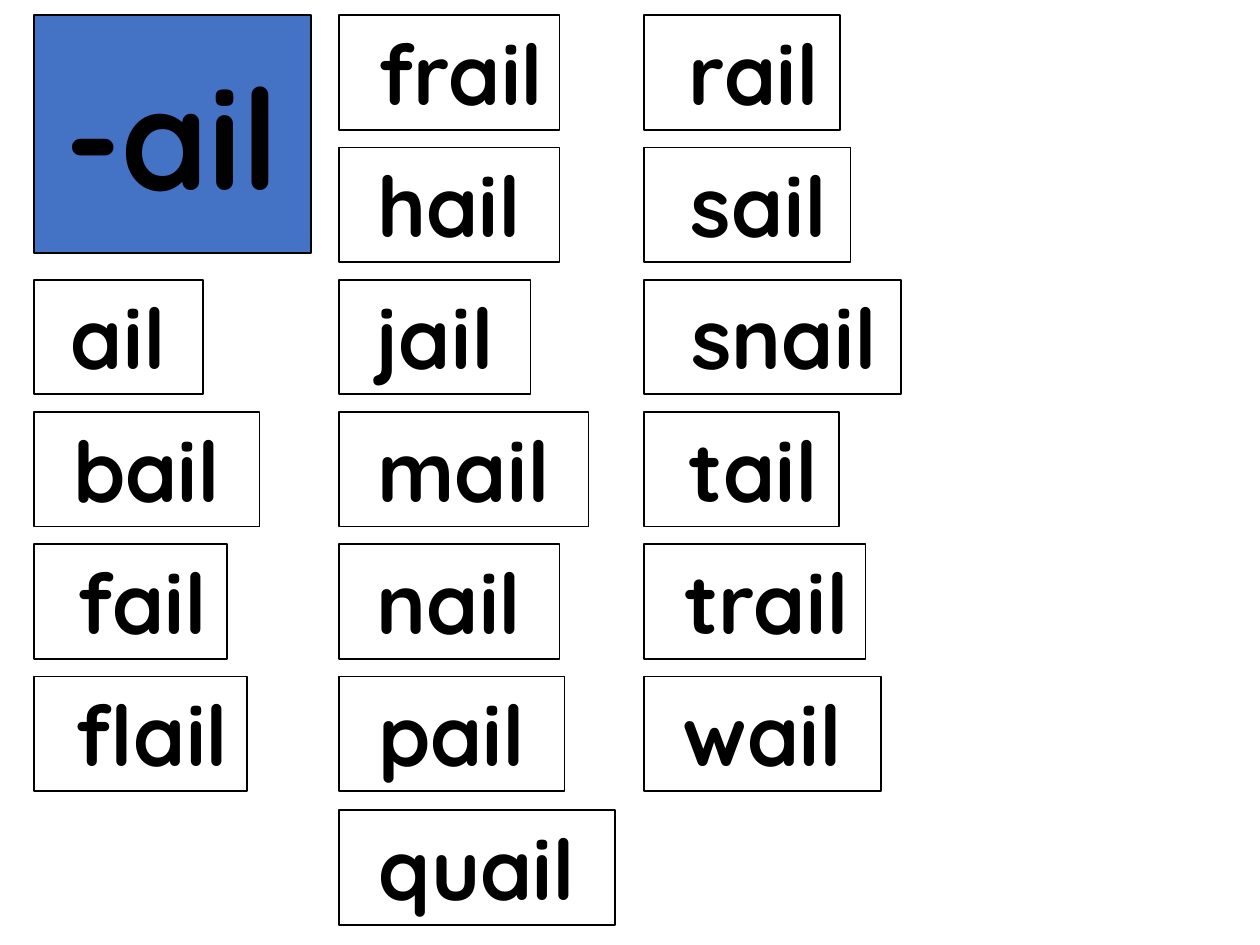
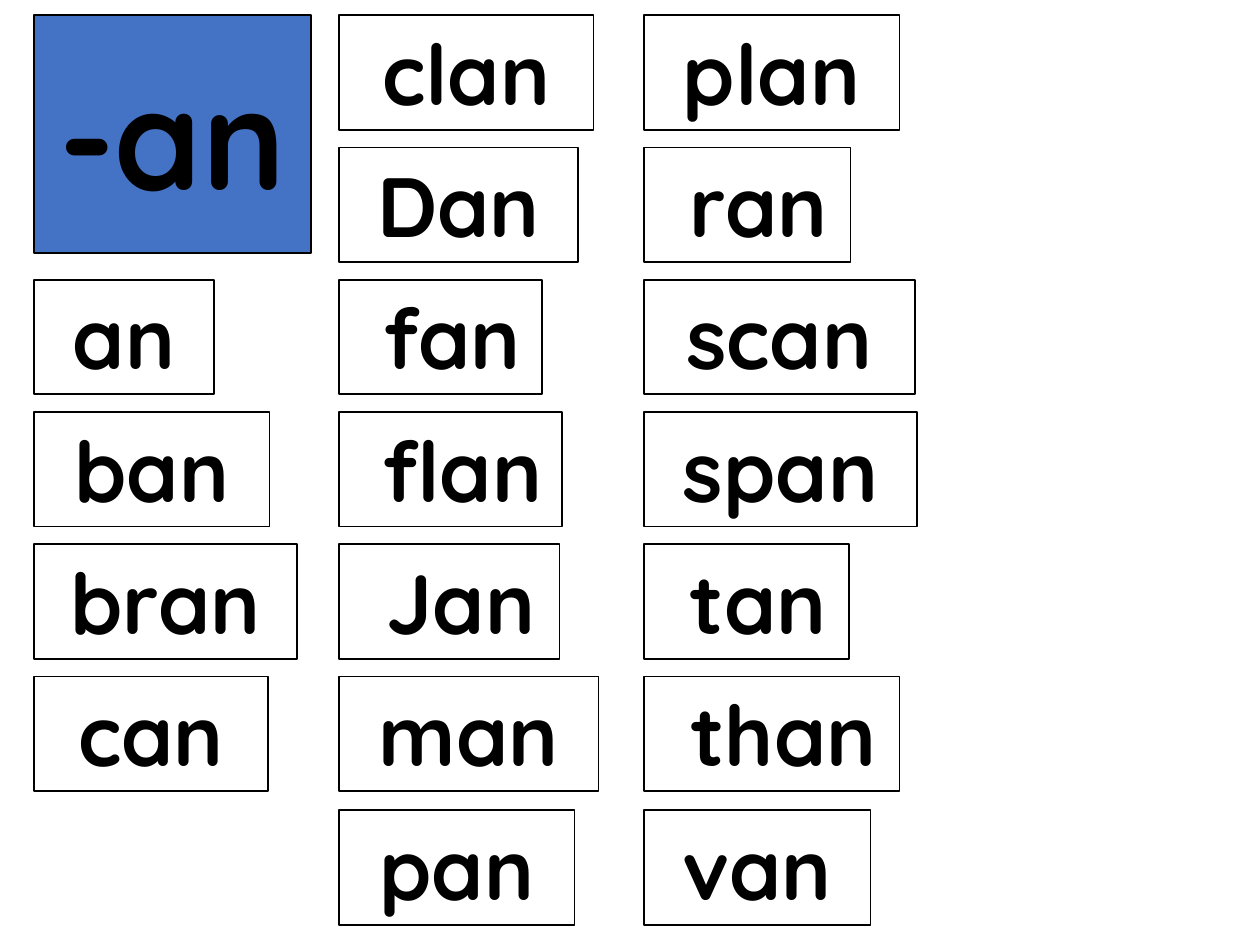
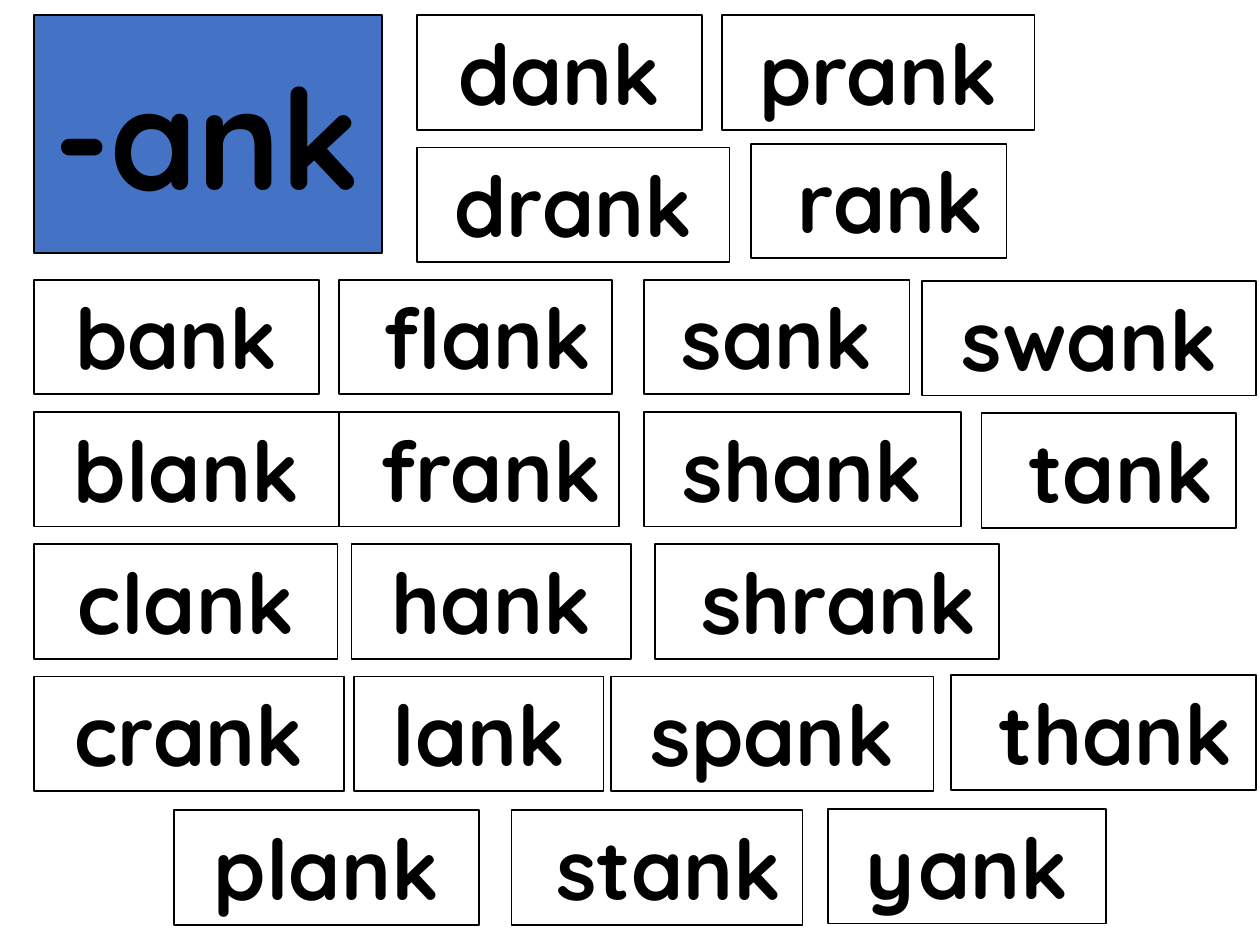
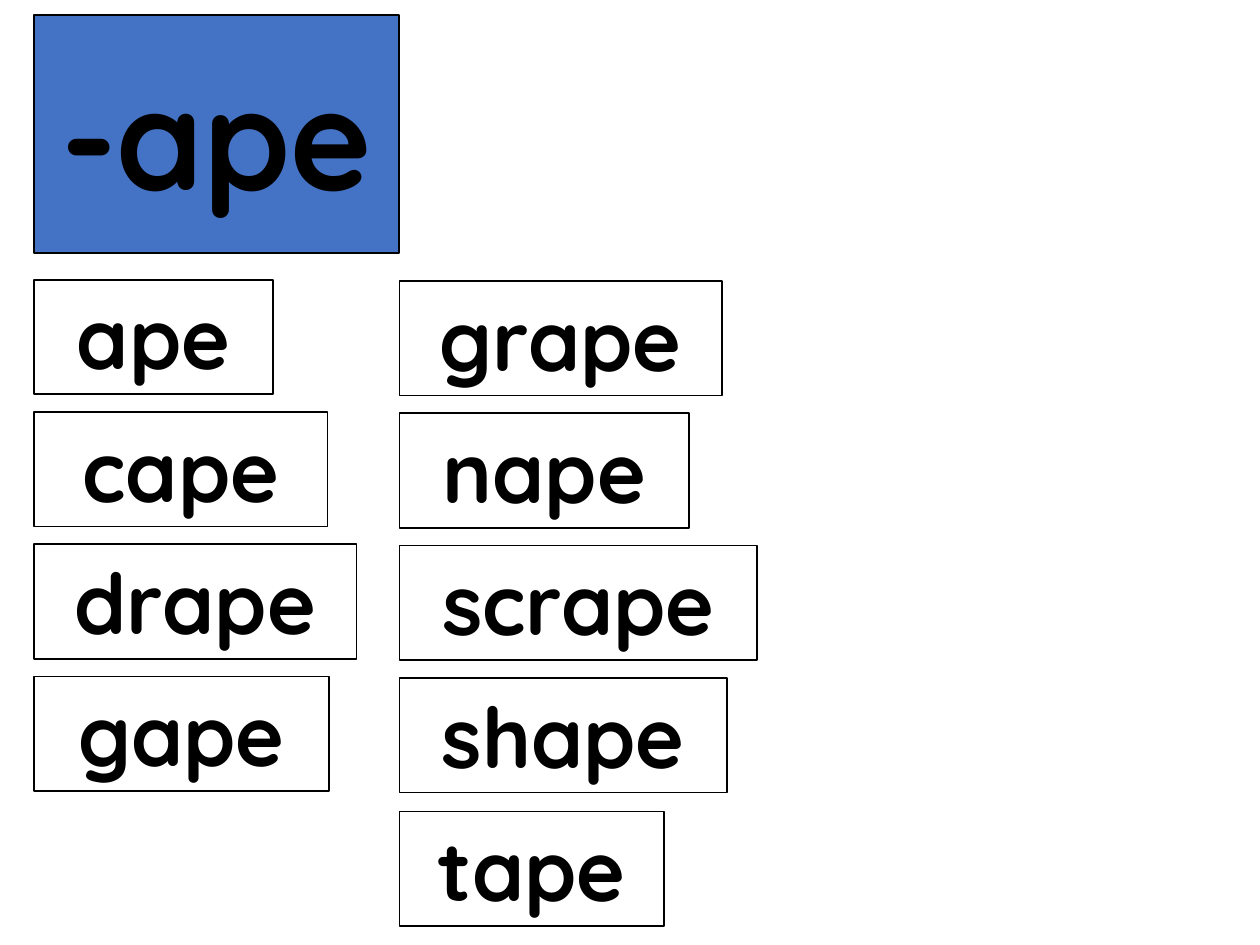
"""Build four word-family slides, each with a title tile and columns of word cards."""
from collections import namedtuple
from dataclasses import dataclass

from pptx import Presentation
from pptx.dml.color import RGBColor
from pptx.enum.shapes import MSO_SHAPE as Shape
from pptx.enum.text import MSO_ANCHOR as Anchor, MSO_AUTO_SIZE as AutoSize, PP_ALIGN as Align
from pptx.util import Emu, Pt

Family = namedtuple("Family", "ending title_width columns")
Column = namedtuple("Column", "left first_row drop widths")

FAMILIES = [
    Family("-ail", 220, [
        Column(511, 0, 0, {"rail": 156, "sail": 164, "snail": 204, "tail": 155,
                           "trail": 176, "wail": 188}),
        Column(269, 0, 0, {"frail": 175, "hail": 175, "jail": 152, "mail": 198,
                           "nail": 175, "pail": 179, "quail": 219}),
        Column(27, 2, 0, {"ail": 134, "bail": 179, "fail": 153, "flail": 169}),
    ]),
    Family("-an", 220, [
        Column(511, 0, 0, {"plan": 203, "ran": 164, "scan": 215, "span": 217,
                           "tan": 163, "than": 203, "van": 180}),
        Column(269, 0, 0, {"clan": 202, "Dan": 190, "fan": 161, "flan": 177,
                           "Jan": 175, "man": 206, "pan": 187}),
        Column(27, 2, 0, {"an": 143, "ban": 187, "bran": 209, "can": 186}),
    ]),
    Family("-ank", 276, [
        Column(573, 0, 0, {"prank": 248}),
        Column(596, 1, -3, {"rank": 203}),
        Column(511, 2, 0, {"sank": 211, "shank": 252}),
        Column(520, 4, 0, {"shrank": 273}),
        Column(485, 5, 0, {"spank": 256}),
        Column(406, 6, 0, {"stank": 231}),
        Column(732, 2, 1, {"swank": 265}),
        Column(779, 3, 1, {"tank": 202}),
        Column(755, 5, -1, {"thank": 242}),
        Column(657, 6, -1, {"yank": 221}),
        Column(331, 0, 0, {"dank": 226, "drank": 248}),
        Column(269, 2, 0, {"flank": 217, "frank": 222}),
        Column(279, 4, 0, {"hank": 222}),
        Column(281, 5, 0, {"lank": 198}),
        Column(138, 6, 0, {"plank": 242}),
        Column(27, 2, 0, {"bank": 226, "blank": 242, "clank": 241, "crank": 246}),
    ]),
    Family("-ape", 290, [
        Column(317, 2, 1, {"grape": 256, "nape": 230, "scrape": 284, "shape": 260,
                           "tape": 210}),
        Column(27, 2, 0, {"ape": 190, "cape": 233, "drape": 256, "gape": 234}),
    ]),
]

PX = 9144
PAGE_WIDTH, PAGE_HEIGHT = 1000, 750
LEFT, TOP = 27, 12
TITLE_HEIGHT, CARD_HEIGHT = 189, 91
LAST_ROW, LAST_ROW_OFFSET = 6, 631


@dataclass(frozen=True)
class Theme:
    font: str = "Quicksand"
    ink: RGBColor = RGBColor(0x00, 0x00, 0x00)
    paper: RGBColor = RGBColor(0xFF, 0xFF, 0xFF)
    accent: RGBColor = RGBColor(0x44, 0x72, 0xC4)
    title_size: int = 80
    card_size: int = 48
    outline: int = 1


THEME = Theme()


def row_top(row):
    return TOP + row * LAST_ROW_OFFSET // LAST_ROW


def add_tile(page, bounds, text, fill, size):
    box = page.shapes.add_shape(Shape.RECTANGLE, *(Emu(length * PX) for length in bounds))
    box.shadow.inherit = False
    box.fill.solid()
    box.fill.fore_color.rgb = fill
    box.line.color.rgb = THEME.ink
    box.line.width = Pt(THEME.outline)
    para = box.text_frame.paragraphs[0]
    para.alignment = Align.CENTER
    span = para.add_run()
    span.text = text
    span.font.name = THEME.font
    span.font.size = Pt(size)
    span.font.bold = True
    span.font.color.rgb = THEME.ink
    return box.text_frame


def add_card(page, left, top, width, word):
    frame = add_tile(page, (left, top, width, CARD_HEIGHT), f" {word} ",
                     THEME.paper, THEME.card_size)
    frame.vertical_anchor = Anchor.TOP
    frame.word_wrap = False
    frame.auto_size = AutoSize.SHAPE_TO_FIT_TEXT


def add_title(page, family):
    frame = add_tile(page, (LEFT, TOP, family.title_width, TITLE_HEIGHT), family.ending,
                     THEME.accent, THEME.title_size)
    frame.vertical_anchor = Anchor.MIDDLE
    frame.word_wrap = True


def add_family(deck, family):
    page = deck.slides.add_slide(deck.slide_layouts[6])
    page.background.fill.solid()
    page.background.fill.fore_color.rgb = THEME.paper
    for column in family.columns:
        for row, (word, width) in enumerate(column.widths.items(), column.first_row):
            add_card(page, column.left, row_top(row) + column.drop, width, word)
    add_title(page, family)


def main():
    deck = Presentation()
    deck.slide_width = Emu(PAGE_WIDTH * PX)
    deck.slide_height = Emu(PAGE_HEIGHT * PX)
    for family in FAMILIES:
        add_family(deck, family)
    deck.save("out.pptx")


if __name__ == "__main__":
    main()
